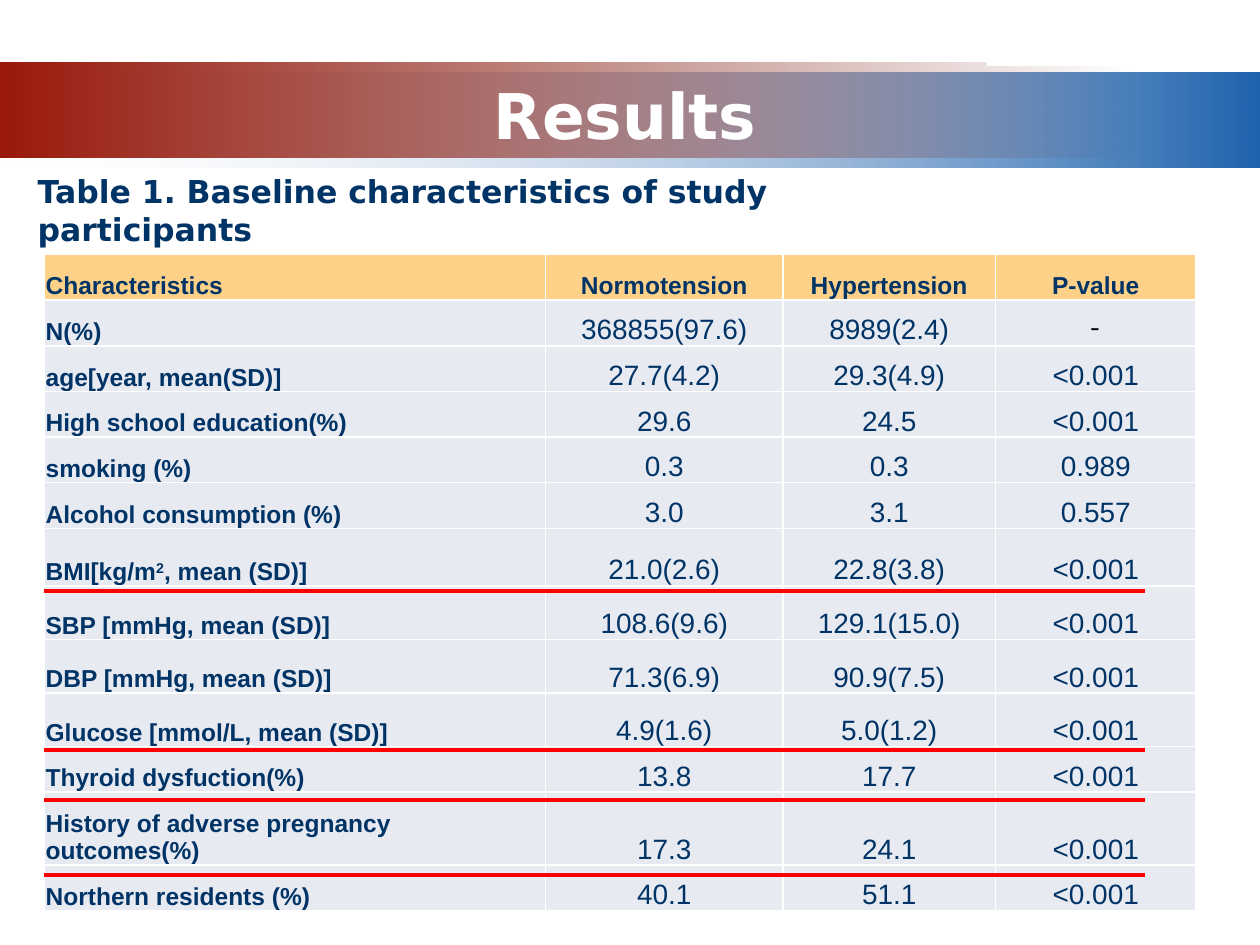
from lxml.etree import SubElement
from pptx import Presentation
from pptx.dml.color import RGBColor
from pptx.enum.shapes import MSO_CONNECTOR, MSO_SHAPE
from pptx.enum.text import MSO_ANCHOR, PP_ALIGN
from pptx.oxml.ns import qn
from pptx.util import Cm, Pt

COLORS = {
    "white": "FFFFFF", "navy": "003366", "black": "000000", "rule": "FF0000",
    "header": "FED189", "body": "E8EAF1", "pale": "F1F2F7", "blue": "1F63AD",
    "red": "99190B", "dark_red": "6D1208",
}


def rgb(name):
    return RGBColor.from_string(COLORS[name])


def style(para, font, size, color, bold):
    for span in para.runs:
        span.font.name = font
        span.font.size = Pt(size)
        span.font.bold = bold
        span.font.color.rgb = rgb(color)


deck = Presentation()
deck.slide_width, deck.slide_height = Cm(25.4), Cm(19.05)
page = deck.slides.add_slide(deck.slide_layouts[6])

# Gradient bands: top, width, (colour, opacity in thousandths of a percent)
bands = [
    (1.47, 25.4, [("pale", 0), ("blue", 100000)]),
    (1.27, 22.86, [("red", 100000), ("dark_red", 0)]),
]
for top, width, stops in bands:
    band = page.shapes.add_shape(MSO_SHAPE.RECTANGLE, 0, Cm(top), Cm(width), Cm(1.91))
    band.shadow.inherit = False
    band.line.fill.background()
    band.fill.gradient()
    band.fill.gradient_angle = 0
    for stop, (color, opacity) in zip(band.fill.gradient_stops, stops):
        stop.color.rgb = rgb(color)
    for tint, (color, opacity) in zip(band._element.spPr.iter(qn("a:srgbClr")), stops):
        SubElement(tint, qn("a:alpha")).set("val", str(opacity))

# Title and table caption
headings = [
    ("Results", 2.34, 1.52, 20.52, 1.57, 36, "white", PP_ALIGN.CENTER),
    ("Table 1. Baseline characteristics of study participants",
     0.51, 3.73, 19.66, 1.02, 18, "navy", PP_ALIGN.LEFT),
]
for text, left, top, width, height, size, color, align in headings:
    box = page.shapes.add_textbox(Cm(left), Cm(top), Cm(width), Cm(height))
    frame = box.text_frame
    frame.word_wrap = True
    frame.vertical_anchor = MSO_ANCHOR.MIDDLE
    frame.text = text
    para = frame.paragraphs[0]
    para.alignment = align
    style(para, "DejaVu Sans", size, color, True)

# White corner panels
for left, top, width, height in [(19.91, 0.53, 5.49, 0.79), (19.71, 17.73, 4.8, 1.32)]:
    panel = page.shapes.add_shape(
        MSO_SHAPE.RECTANGLE, Cm(left), Cm(top), Cm(width), Cm(height))
    panel.shadow.inherit = False
    panel.fill.solid()
    panel.fill.fore_color.rgb = rgb("white")
    panel.line.color.rgb = rgb("white")
    panel.line.width = Pt(0.75)

# Baseline table: row height, then the cells; ^ surrounds a superscript
rows = [
    (0.92, "Characteristics", "Normotension", "Hypertension", "P-value"),
    (0.92, "N(%)", "368855(97.6)", "8989(2.4)", "-"),
    (0.92, "age[year, mean(SD)]", "27.7(4.2)", "29.3(4.9)", "<0.001"),
    (0.92, "High school education(%)", "29.6", "24.5", "<0.001"),
    (0.92, "smoking (%)", "0.3", "0.3", "0.989"),
    (0.92, "Alcohol consumption (%)", "3.0", "3.1", "0.557"),
    (1.16, "BMI[kg/m^2^, mean (SD)]", "21.0(2.6)", "22.8(3.8)", "<0.001"),
    (1.08, "SBP [mmHg, mean (SD)]", "108.6(9.6)", "129.1(15.0)", "<0.001"),
    (1.08, "DBP [mmHg, mean (SD)]", "71.3(6.9)", "90.9(7.5)", "<0.001"),
    (1.08, "Glucose [mmol/L, mean (SD)]", "4.9(1.6)", "5.0(1.2)", "<0.001"),
    (0.92, "Thyroid dysfuction(%)", "13.8", "17.7", "<0.001"),
    (1.47, "History of adverse pregnancy outcomes(%)", "17.3", "24.1", "<0.001"),
    (0.92, "Northern residents (%)", "40.1", "51.1", "<0.001"),
]
widths = [10.11, 4.78, 4.29, 4.04]
table = page.shapes.add_table(
    len(rows), len(widths), Cm(0.89), Cm(5.13),
    Cm(sum(widths)), Cm(sum(row[0] for row in rows))).table
for column, width in zip(table.columns, widths):
    column.width = Cm(width)

for r, (height, *texts) in enumerate(rows):
    table.rows[r].height = Cm(height)
    for c, text in enumerate(texts):
        cell = table.cell(r, c)
        cell.margin_left = cell.margin_right = cell.margin_top = Cm(0.03)
        cell.margin_bottom = 0
        cell.vertical_anchor = MSO_ANCHOR.BOTTOM
        for side in ("a:lnL", "a:lnR", "a:lnT", "a:lnB"):
            border = SubElement(cell._tc.tcPr, qn(side), w=str(Pt(1)))
            paint = SubElement(border, qn("a:solidFill"))
            SubElement(paint, qn("a:srgbClr"), val=COLORS["white"])
        cell.fill.solid()
        cell.fill.fore_color.rgb = rgb("header" if r == 0 else "body")

        para = cell.text_frame.paragraphs[0]
        para.alignment = PP_ALIGN.CENTER if c else PP_ALIGN.LEFT
        for i, part in enumerate(text.split("^")):
            span = para.add_run()
            span.text = part
            if i == 1:
                span.font._element.set("baseline", "30000")
        label = r == 0 or c == 0
        if text == "-":
            style(para, "Noto Sans CJK SC", 16, "black", False)
        else:
            style(para, "Arial", 14 if label else 16, "navy", label)

# Red rules under the highlighted rows
for y in (11.92, 15.11, 16.13, 17.63):
    rule = page.shapes.add_connector(
        MSO_CONNECTOR.STRAIGHT, Cm(0.89), Cm(y), Cm(23.09), Cm(y))
    rule.line.color.rgb = rgb("rule")
    rule.line.width = Pt(2.25)
    SubElement(rule._element.spPr, qn("a:effectLst"))

deck.save("out.pptx")
